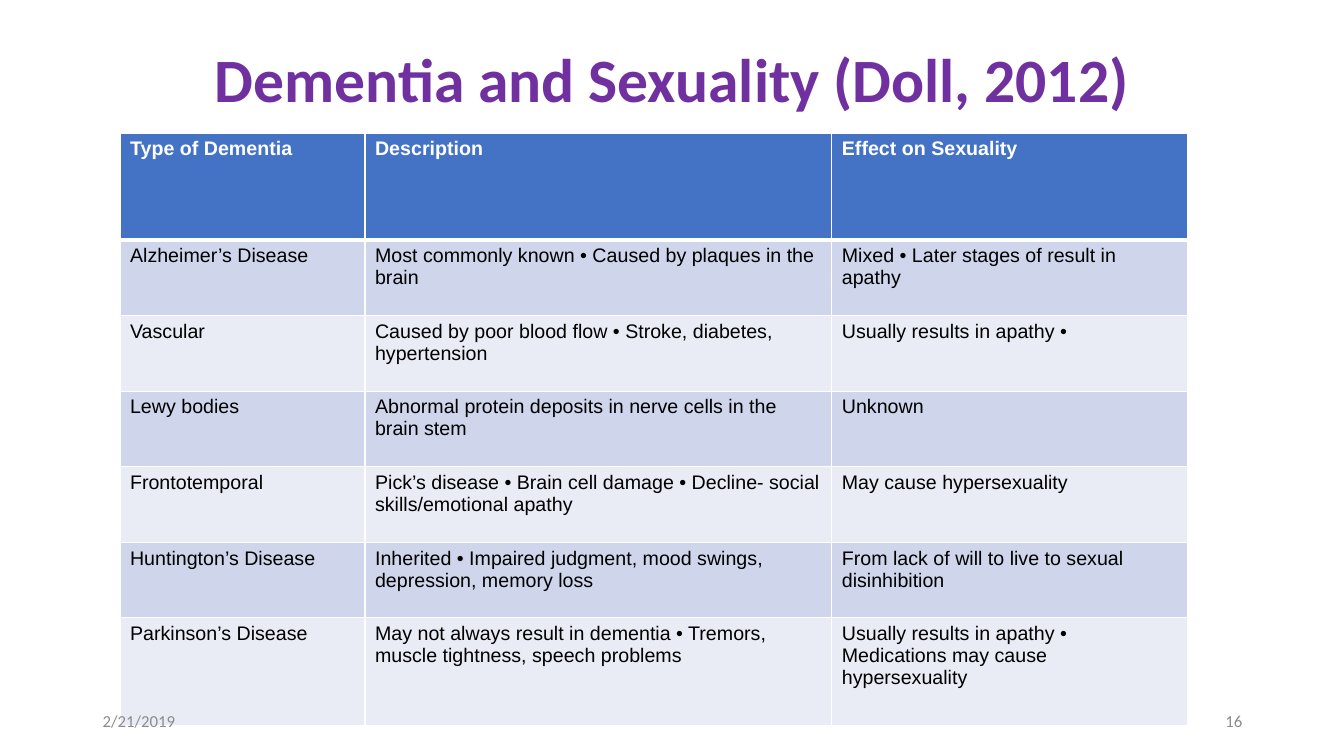
from dataclasses import dataclass

from lxml import etree
from pptx import Presentation
from pptx import util as u
from pptx.dml.color import RGBColor
from pptx.enum import text
from pptx.oxml import ns

COLORS = {
    "title": "7030A0",
    "footer": "8C8C8C",
    "header": "4472C4",
    "band_dark": "CFD5EA",
    "band_light": "E9EBF5",
    "white": "FFFFFF",
    "black": "000000",
}


@dataclass(frozen=True)
class TextBox:
    content: str
    left: float
    top: float
    width: float
    height: float
    size: int
    color: str
    bold: bool = False
    align: text.PP_ALIGN = text.PP_ALIGN.LEFT
    anchor: text.MSO_ANCHOR = text.MSO_ANCHOR.TOP
    line_spacing: float = 1.0
    space_before: int = 0


@dataclass(frozen=True)
class DementiaType:
    name: str
    description: str
    effect: str


TITLE = TextBox("Dementia and Sexuality (Doll, 2012)", 0.92, 0.44, 11.5, 1.14, 44, "title",
                bold=True, align=text.PP_ALIGN.CENTER, line_spacing=0.9, space_before=10)
SLIDE_NUMBER = TextBox("16", 9.42, 6.95, 3, 0.4, 12, "footer",
                       align=text.PP_ALIGN.RIGHT, anchor=text.MSO_ANCHOR.MIDDLE)
DATE = TextBox("2/21/2019", 0.92, 6.95, 3, 0.4, 12, "footer", anchor=text.MSO_ANCHOR.MIDDLE)

HEADER = DementiaType("Type of Dementia", "Description", "Effect on Sexuality")
DEMENTIA_TYPES = [
    DementiaType("Alzheimer’s Disease",
                 "Most commonly known • Caused by plaques in the brain",
                 "Mixed • Later stages of result in apathy"),
    DementiaType("Vascular",
                 "Caused by poor blood flow • Stroke, diabetes, hypertension",
                 "Usually results in apathy •"),
    DementiaType("Lewy bodies",
                 "Abnormal protein deposits in nerve cells in the brain stem",
                 "Unknown"),
    DementiaType("Frontotemporal",
                 "Pick’s disease • Brain cell damage • Decline- social skills/emotional apathy",
                 "May cause hypersexuality"),
    DementiaType("Huntington’s Disease",
                 "Inherited • Impaired judgment, mood swings, depression, memory loss",
                 "From lack of will to live to sexual disinhibition"),
    DementiaType("Parkinson’s Disease",
                 "May not always result in dementia • Tremors, muscle tightness, speech problems",
                 "Usually results in apathy • Medications may cause hypersexuality"),
]
COLUMN_WIDTHS = [2.43, 4.63, 3.53]
ROW_HEIGHTS = [1.06] + [0.75] * 5 + [1.07]


def write_text(frame, content: str, *, font: str, size: int, color: str, bold: bool = False,
               align: text.PP_ALIGN = text.PP_ALIGN.LEFT, line_spacing: float = 1.0,
               space_before: int = 0) -> None:
    paragraph = frame.paragraphs[0]
    paragraph.alignment = align
    paragraph.line_spacing = line_spacing
    paragraph.space_before = u.Pt(space_before)
    run = paragraph.add_run()
    run.text = content
    run.font.name = font
    run.font.size = u.Pt(size)
    run.font.bold = bold
    run.font.color.rgb = RGBColor.from_string(COLORS[color])


def add_text_box(slide, box: TextBox) -> None:
    shape = slide.shapes.add_textbox(u.Inches(box.left), u.Inches(box.top),
                                     u.Inches(box.width), u.Inches(box.height))
    frame = shape.text_frame
    frame.word_wrap = True
    frame.vertical_anchor = box.anchor
    write_text(frame, box.content, font="Calibri", size=box.size, color=box.color,
               bold=box.bold, align=box.align, line_spacing=box.line_spacing,
               space_before=box.space_before)


def set_borders(cell, widths: dict[str, int]) -> None:
    properties = cell._tc.get_or_add_tcPr()
    for position, (side, width) in enumerate(widths.items()):
        line = etree.Element(ns.qn(f"a:ln{side}"), w=str(u.Pt(width)))
        fill = etree.SubElement(line, ns.qn("a:solidFill"))
        etree.SubElement(fill, ns.qn("a:srgbClr"), val=COLORS["white"])
        properties.insert(position, line)


def add_dementia_table(slide) -> None:
    rows = [HEADER, *DEMENTIA_TYPES]
    table = slide.shapes.add_table(
        len(rows), len(COLUMN_WIDTHS), u.Inches(1.19), u.Inches(1.32),
        u.Inches(sum(COLUMN_WIDTHS)), u.Inches(sum(ROW_HEIGHTS))).table
    for column, width in zip(table.columns, COLUMN_WIDTHS):
        column.width = u.Inches(width)
    for row_index, (row, height) in enumerate(zip(rows, ROW_HEIGHTS)):
        table.rows[row_index].height = u.Inches(height)
        is_header = row_index == 0
        band = "header" if is_header else "band_dark" if row_index % 2 else "band_light"
        borders = {"L": 1, "R": 1, "T": 3 if row_index == 1 else 1, "B": 3 if is_header else 1}
        for column_index, content in enumerate((row.name, row.description, row.effect)):
            cell = table.cell(row_index, column_index)
            cell.fill.solid()
            cell.fill.fore_color.rgb = RGBColor.from_string(COLORS[band])
            set_borders(cell, borders)
            write_text(cell.text_frame, content, font="Arial", size=14,
                       color="white" if is_header else "black", bold=is_header)


def main() -> None:
    presentation = Presentation()
    presentation.slide_width = u.Inches(13.33)
    presentation.slide_height = u.Inches(7.5)
    slide = presentation.slides.add_slide(presentation.slide_layouts[6])
    add_text_box(slide, TITLE)
    add_text_box(slide, SLIDE_NUMBER)
    add_dementia_table(slide)
    add_text_box(slide, DATE)
    presentation.save("out.pptx")


if __name__ == "__main__":
    main()
